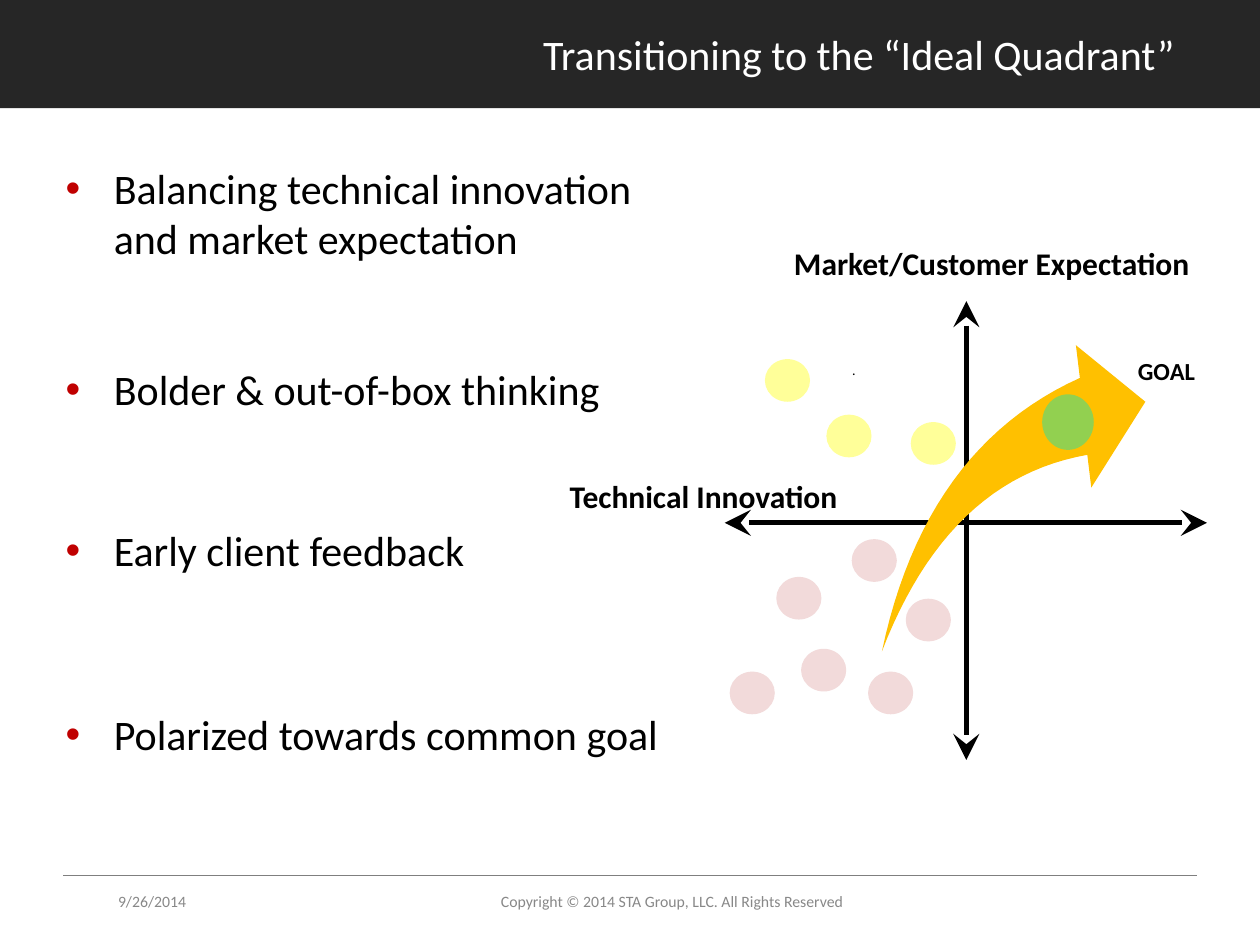
from dataclasses import dataclass
from typing import NamedTuple

import pptx
import pptx.dml.color
import pptx.enum.shapes
import pptx.enum.text
import pptx.oxml
import pptx.oxml.ns
import pptx.util

Cm = pptx.util.Cm
Pt = pptx.util.Pt
Align = pptx.enum.text.PP_ALIGN
Anchor = pptx.enum.text.MSO_ANCHOR
Preset = pptx.enum.shapes.MSO_SHAPE


@dataclass(frozen=True)
class Theme:
    font: str = "Calibri"
    band: str = "262626"
    paper: str = "FFFFFF"
    ink: str = "000000"
    rule: str = "7F7F7F"
    footer: str = "888888"
    bullet: str = "C00000"
    innovators: str = "FFFF99"
    laggards: str = "F2DADA"
    arrow: str = "FFC000"
    goal: str = "92D050"
    heading_size: float = 24
    axis_size: float = 18
    goal_size: float = 14
    footer_size: float = 9
    mark_size: float = 8


class Box(NamedTuple):
    left: float
    top: float
    width: float
    height: float


class Point(NamedTuple):
    x: float
    y: float


class Label(NamedTuple):
    text: str
    box: Box
    size: float
    color: str
    bold: bool = False
    align: Align = Align.CENTER
    anchor: Anchor = Anchor.TOP


class Bullet(NamedTuple):
    text: str
    gap: float


THEME = Theme()
CIRCLE = (0.91, 0.86)
INDENT = 0.97
INNOVATORS = [Point(16.66, 8.36), Point(18.36, 8.51), Point(15.42, 7.24)]
LAGGARDS = [
    Point(17.5, 13.54), Point(18.26, 12.07), Point(14.71, 13.54),
    Point(15.65, 11.63), Point(17.17, 10.87), Point(16.15, 13.08),
]
OUTER_CURVE = [Point(17.78, 13.13), Point(18.36, 10.39), Point(19.69, 8.56), Point(21.77, 7.62)]
ARROWHEAD = [Point(21.69, 6.96), Point(23.09, 8.1), Point(22, 9.83)]
INNER_CURVE = [Point(21.92, 9.17), Point(20.04, 9.5), Point(18.67, 10.82), Point(17.78, 13.13)]
BULLETS = [
    Bullet("Balancing technical innovation and market expectation", 0),
    Bullet("Bolder & out-of-box thinking", 57.5),
    Bullet("Early client feedback", 63),
    Bullet("Polarized towards common goal", 76.5),
]
FOOTERS = [
    Label("9/26/2014", Box(2.13, 17.65, 5.92, 1.02), THEME.footer_size, THEME.footer,
          align=Align.LEFT, anchor=Anchor.MIDDLE),
    Label("Copyright © 2014 STA Group, LLC. All Rights Reserved ", Box(8.08, 17.65, 11, 1.02),
          THEME.footer_size, THEME.footer, anchor=Anchor.MIDDLE),
]
CHART_LABELS = [
    Label("Market/Customer Expectation", Box(15.65, 4.8, 8.69, 1.02), THEME.axis_size, THEME.ink, True),
    Label("Technical Innovation", Box(10.77, 9.5, 6.83, 1.02), THEME.axis_size, THEME.ink, True),
    Label("GOAL", Box(21.51, 7.06, 4.01, 0.86), THEME.goal_size, THEME.ink, True),
]
MARK = Label(".", Box(11.79, 7.29, 6.12, 7.14), THEME.mark_size, THEME.ink, align=Align.RIGHT)


def rgb(color: str) -> pptx.dml.color.RGBColor:
    return pptx.dml.color.RGBColor.from_string(color)


def paint(shape, color: str) -> None:
    shape.shadow.inherit = False
    shape.fill.solid()
    shape.fill.fore_color.rgb = rgb(color)
    shape.line.fill.background()


def add_preset(slide, preset: Preset, box: Box, color: str):
    shape = slide.shapes.add_shape(preset, *map(Cm, box))
    paint(shape, color)
    return shape


def add_line(slide, start: Point, end: Point, color: str, weight: float, arrows: bool = False):
    line = slide.shapes.add_connector(
        pptx.enum.shapes.MSO_CONNECTOR.STRAIGHT, *map(Cm, (*start, *end)))
    line.line.color.rgb = rgb(color)
    line.line.width = Pt(weight)
    properties = line.element.spPr
    if arrows:
        outline = properties.find(pptx.oxml.ns.qn("a:ln"))
        for tag in ("headEnd", "tailEnd"):
            outline.append(pptx.oxml.parse_xml(
                f'<a:{tag} {pptx.oxml.ns.nsdecls("a")} type="stealth" w="lg" len="lg"/>'))
    properties.append(pptx.oxml.parse_xml(f'<a:effectLst {pptx.oxml.ns.nsdecls("a")}/>'))
    return line


def write(paragraph, text: str, size: float, color: str, bold: bool = False) -> None:
    run = paragraph.add_run()
    run.text = text
    run.font.name = THEME.font
    run.font.size = Pt(size)
    run.font.bold = bold
    run.font.color.rgb = rgb(color)


def add_label(slide, label: Label):
    frame = slide.shapes.add_textbox(*map(Cm, label.box)).text_frame
    frame.word_wrap = True
    frame.vertical_anchor = label.anchor
    paragraph = frame.paragraphs[0]
    paragraph.alignment = label.align
    write(paragraph, label.text, label.size, label.color, label.bold)
    return frame


def place(placeholder, box: Box, anchor: Anchor):
    placeholder.left, placeholder.top, placeholder.width, placeholder.height = map(Cm, box)
    frame = placeholder.text_frame
    frame.auto_size = pptx.enum.text.MSO_AUTO_SIZE.NONE
    frame.word_wrap = True
    frame.vertical_anchor = anchor
    return frame


def add_bullet(paragraph, bullet: Bullet) -> None:
    properties = paragraph._p.get_or_add_pPr()
    properties.set("marL", str(Cm(INDENT)))
    properties.set("indent", str(-Cm(INDENT)))
    namespace = pptx.oxml.ns.nsdecls("a")
    for xml in (f'<a:buClr {namespace}><a:srgbClr val="{THEME.bullet}"/></a:buClr>',
                f'<a:buChar {namespace} char="•"/>'):
        properties.append(pptx.oxml.parse_xml(xml))
    paragraph.space_before = Pt(bullet.gap)
    write(paragraph, bullet.text, THEME.heading_size, THEME.ink)


def bezier(controls: list[Point], steps: int = 24) -> list[Point]:
    points = []
    for step in range(steps + 1):
        t = step / steps
        weights = ((1 - t) ** 3, 3 * t * (1 - t) ** 2, 3 * t ** 2 * (1 - t), t ** 3)
        points.append(Point(*(sum(w * c for w, c in zip(weights, axis)) for axis in zip(*controls))))
    return points


def add_swoosh(slide) -> None:
    outline = [(Cm(x), Cm(y)) for x, y in bezier(OUTER_CURVE) + ARROWHEAD + bezier(INNER_CURVE)]
    builder = slide.shapes.build_freeform(*outline[0])
    builder.add_line_segments(outline[1:], close=True)
    paint(builder.convert_to_shape(), THEME.arrow)


def main() -> None:
    deck = pptx.Presentation()
    deck.slide_width, deck.slide_height = Cm(25.4), Cm(19.05)
    slide = deck.slides.add_slide(deck.slide_layouts[1])
    title, body = slide.shapes.title, slide.placeholders[1]

    band = add_preset(slide, Preset.RECTANGLE, Box(0, 0, 25.4, 2.18), THEME.band)
    title.element.addprevious(band.element)
    heading = place(title, Box(5, 0, 19.13, 2.18), Anchor.MIDDLE).paragraphs[0]
    heading.alignment = Align.RIGHT
    write(heading, "Transitioning to the “Ideal Quadrant” ", THEME.heading_size, THEME.paper)

    points = place(body, Box(1.07, 3.15, 12.62, 13.51), Anchor.TOP)
    for index, bullet in enumerate(BULLETS):
        add_bullet(points.add_paragraph() if index else points.paragraphs[0], bullet)

    add_line(slide, Point(1.27, 17.65), Point(24.13, 17.65), THEME.rule, 0.75)
    for centers, color in ((INNOVATORS, THEME.innovators), (LAGGARDS, THEME.laggards)):
        for corner in centers:
            add_preset(slide, Preset.OVAL, Box(*corner, *CIRCLE), color)
    add_line(slide, Point(14.61, 10.54), Point(24.33, 10.54), THEME.ink, 3, arrows=True)
    add_line(slide, Point(19.48, 6.07), Point(19.48, 15.32), THEME.ink, 3, arrows=True)
    for label in FOOTERS + CHART_LABELS:
        add_label(slide, label)
    add_swoosh(slide)
    add_preset(slide, Preset.OVAL, Box(21.01, 7.95, 1.04, 1.12), THEME.goal)
    mark = add_label(slide, MARK)
    mark.margin_left = mark.margin_top = mark.margin_bottom = 0
    mark.margin_right = Cm(0.66)
    deck.save("out.pptx")


if __name__ == "__main__":
    main()
